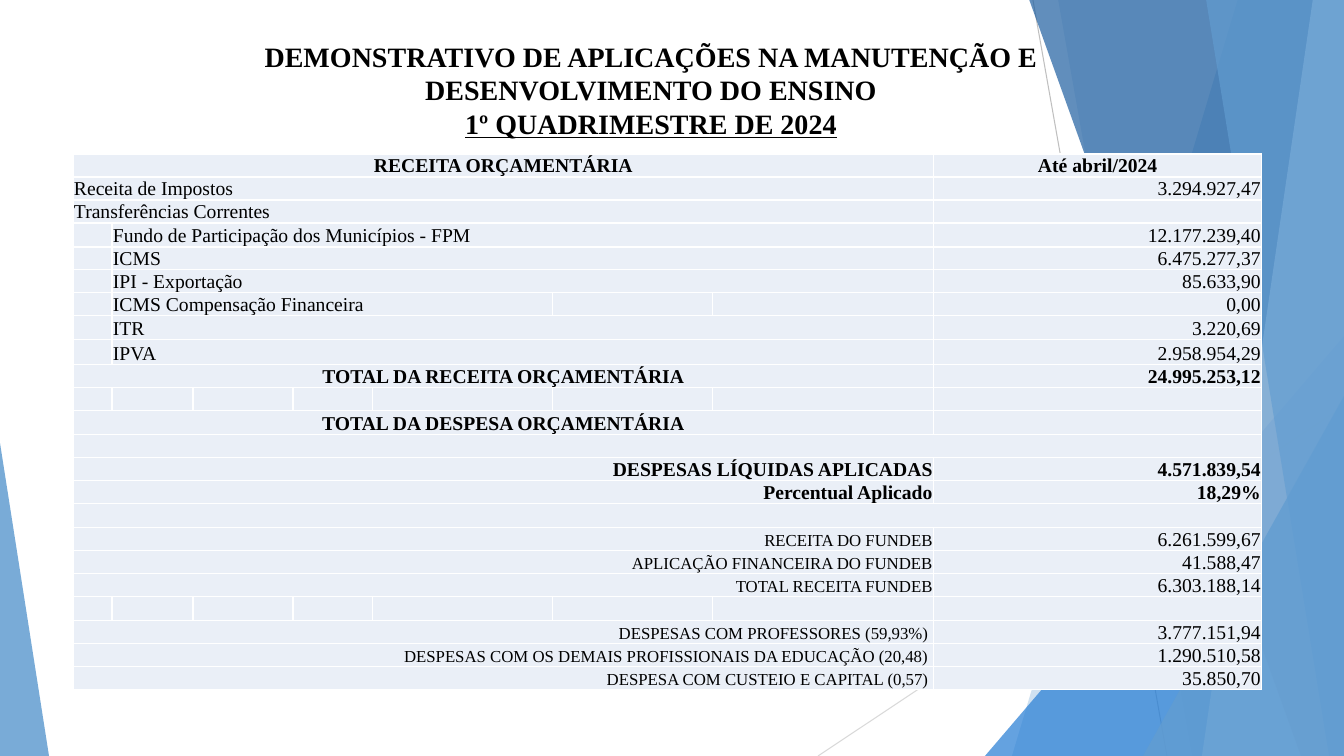
"""Build the slide on education spending for the first four months of 2024."""
from lxml.etree import SubElement
from pptx import Presentation
from pptx.dml.color import RGBColor
from pptx.enum.shapes import MSO_CONNECTOR, MSO_SHAPE
from pptx.enum.text import MSO_ANCHOR, MSO_AUTO_SIZE, PP_ALIGN as ALIGN
from pptx.oxml.ns import qn
from pptx.util import Pt

PX = 914400 / 100.8
FONT = "Times New Roman"
COLORS = {
    "text": "000000", "cell": "EAEFF7", "border": "FFFFFF",
    "line": "BFBFBF", "pale_line": "D9D9D9", "sky": "629DD1",
    "blue": "297FD5", "navy": "1F5FA0", "ice": "A1C4E3",
}


def px(*lengths):
    return [round(length * PX) for length in lengths]


def style_text(para, size, bold, align):
    para.alignment = align
    for span in para.runs:
        span.font.name = FONT
        span.font.size = Pt(size)
        span.font.bold = bold
        span.font.color.rgb = RGBColor.from_string(COLORS["text"])


deck = Presentation()
deck.slide_width, deck.slide_height = px(1344, 756)
page = deck.slides.add_slide(deck.slide_layouts[5])

for ends, color in [((1033, 0, 1167, 756), "line"), ((1344, 406, 818, 756), "pale_line")]:
    ray = page.shapes.add_connector(MSO_CONNECTOR.STRAIGHT, *px(*ends))
    ray.line.color.rgb = RGBColor.from_string(COLORS[color])
    ray.line.width = Pt(0.75)
    SubElement(ray.element.spPr, qn("a:effectLst"))

# fmt: off
FACETS = [
    ("band", (1238, 1012), "sky", 30),
    ("band", (1058, 1192), "sky", 20),
    ("triangle", (985, 336, 359, 420, 1), "blue", 72),
    ("band", (1029, 1301), "navy", 70),
    ("band", (1313, 1202), "ice", 70),
    ("band", (1206, 1329), "sky", 65),
    ("triangle", (1143, 396, 201, 360, 1), "sky", 80),
    ("triangle", (0, 443, 49, 313, 0), "sky", 85),
]
for kind, geometry, color, opacity in FACETS:
    if kind == "band":
        top_x, bottom_x = geometry
        outline = page.shapes.build_freeform(top_x, -1, scale=PX)
        outline.add_line_segments([(1344, -1), (1344, 756), (bottom_x, 756)], close=True)
        facet = outline.convert_to_shape()
    else:
        *box, apex = geometry
        facet = page.shapes.add_shape(MSO_SHAPE.ISOSCELES_TRIANGLE, *px(*box))
        facet.adjustments[0] = apex
    facet.shadow.inherit = False
    facet.line.fill.background()
    facet.fill.solid()
    facet.fill.fore_color.rgb = RGBColor.from_string(COLORS[color])
    tint = facet.element.spPr.find(qn("a:solidFill")).find(qn("a:srgbClr"))
    SubElement(tint, qn("a:alpha"), val=str(opacity * 1000))

title = page.shapes.title
title.element.getparent().append(title.element)
title.left, title.top, title.width, title.height = px(177, 34, 948, 145)
title.text_frame.text = (
    "DEMONSTRATIVO DE APLICAÇÕES NA MANUTENÇÃO E DESENVOLVIMENTO DO ENSINO\v"
    "1º QUADRIMESTRE DE 2024"
)
title.text_frame.word_wrap = True
title.text_frame.auto_size = MSO_AUTO_SIZE.NONE
title.text_frame.vertical_anchor = MSO_ANCHOR.TOP
heading = title.text_frame.paragraphs[0]
style_text(heading, 20, True, ALIGN.CENTER)
heading.runs[-1].font.underline = True

KINDS = {
    "head": (0, 6, ALIGN.CENTER, True, 14),
    "plain": (0, 6, ALIGN.LEFT, False, 14),
    "item": (1, 6, ALIGN.LEFT, False, 14),
    "short": (1, 4, ALIGN.LEFT, False, 14),
    "result": (0, 6, ALIGN.RIGHT, True, 14),
    "fund": (0, 6, ALIGN.RIGHT, False, 12),
    "blank": (0, 7, ALIGN.LEFT, False, 14),
    "grid": (0, 0, ALIGN.LEFT, False, 14),
}
ROWS = [
    ("head", "RECEITA ORÇAMENTÁRIA", "Até abril/2024"),
    ("plain", "Receita de Impostos", "3.294.927,47"),
    ("plain", "Transferências Correntes", ""),
    ("item", "Fundo de Participação dos Municípios - FPM", "12.177.239,40"),
    ("item", "ICMS", "6.475.277,37"),
    ("item", "IPI - Exportação", "85.633,90"),
    ("short", "ICMS Compensação Financeira", "0,00"),
    ("item", "ITR", "3.220,69"),
    ("item", "IPVA", "2.958.954,29"),
    ("head", "TOTAL DA RECEITA ORÇAMENTÁRIA", "24.995.253,12"),
    ("grid", "", ""),
    ("head", "TOTAL DA DESPESA ORÇAMENTÁRIA", ""),
    ("blank", "", ""),
    ("result", "DESPESAS LÍQUIDAS APLICADAS", "4.571.839,54"),
    ("result", "Percentual Aplicado", "18,29%"),
    ("blank", "", ""),
    ("fund", "RECEITA DO FUNDEB", "6.261.599,67"),
    ("fund", "APLICAÇÃO FINANCEIRA DO FUNDEB", "41.588,47"),
    ("fund", "TOTAL RECEITA FUNDEB", "6.303.188,14"),
    ("grid", "", ""),
    ("fund", "DESPESAS COM PROFESSORES (59,93%) ", "3.777.151,94"),
    ("fund", "DESPESAS COM OS DEMAIS PROFISSIONAIS DA EDUCAÇÃO (20,48) ", "1.290.510,58"),
    ("fund", "DESPESA COM CUSTEIO E CAPITAL (0,57) ", "35.850,70"),
]
COLUMN_WIDTHS = px(39, 81, 100, 80, 180, 160, 221, 328)
row_heights = [24 if index % 4 == 3 else 23 for index in range(len(ROWS))]
row_heights[8] = 25

frame = page.shapes.add_table(
    len(ROWS), len(COLUMN_WIDTHS), *px(73, 154, 1189, sum(row_heights)))
table = frame.table
table.first_row = table.horz_banding = False
for column, width in zip(table.columns, COLUMN_WIDTHS):
    column.width = width
for row, height in zip(table.rows, px(*row_heights)):
    row.height = height

for index, (kind, label, value) in enumerate(ROWS):
    first, last, align, bold, size = KINDS[kind]
    for column in range(len(COLUMN_WIDTHS)):
        cell = table.cell(index, column)
        cell.margin_left, cell.margin_right, cell.margin_top, cell.margin_bottom = px(1, 1, 0, 0)
        cell.vertical_anchor = MSO_ANCHOR.BOTTOM
        para = cell.text_frame.paragraphs[0]
        if column == first and label:
            para.text = label
            style_text(para, size, bold, align)
        elif column == 7 and value:
            para.text = value
            style_text(para, 14, bold, ALIGN.CENTER if index == 0 else ALIGN.RIGHT)
        else:
            SubElement(para._p, qn("a:endParaRPr"), sz="1200")
        properties = cell._tc.get_or_add_tcPr()
        for side in ("lnL", "lnR", "lnT", "lnB"):
            border = SubElement(properties, qn(f"a:{side}"), w="12700")
            ink = SubElement(border, qn("a:solidFill"))
            SubElement(ink, qn("a:srgbClr"), val=COLORS["border"])
        cell.fill.solid()
        cell.fill.fore_color.rgb = RGBColor.from_string(COLORS["cell"])
    if last > first:
        table.cell(index, first).merge(table.cell(index, last))

deck.save("out.pptx")
